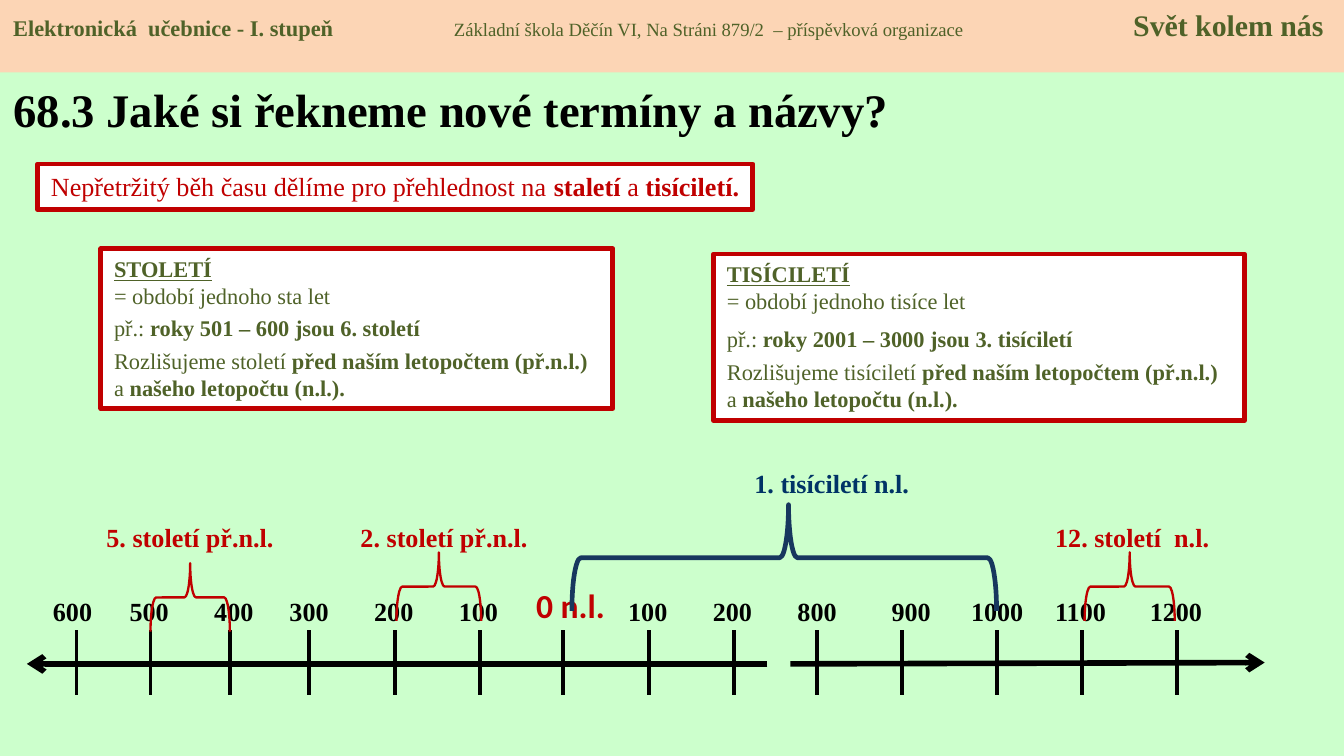
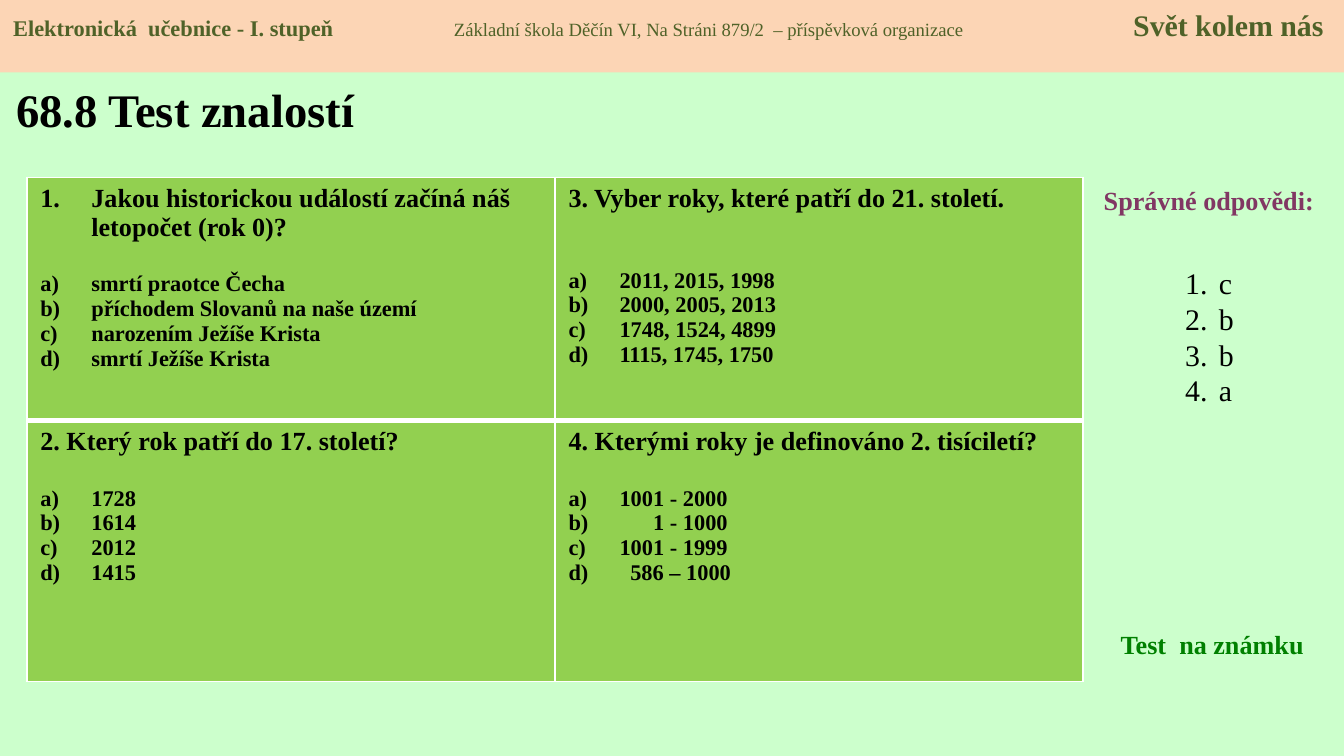
import pptx
import pptx.dml.color
import pptx.enum.shapes
import pptx.enum.text
import pptx.oxml
import pptx.oxml.ns
import pptx.util
from lxml import etree

Inches, Pt = pptx.util.Inches, pptx.util.Pt
SHAPES = pptx.enum.shapes.MSO_SHAPE
ALIGN = pptx.enum.text.PP_ALIGN
ANCHOR = pptx.enum.text.MSO_ANCHOR

# Shared palette
FONT = "Times New Roman"
BLACK, WHITE, RED = "000000", "FFFFFF", "C00000"
MINT, PEACH, OLIVE = "CCFFCC", "FCD5B5", "4F6228"
LIME, NAVY = "92D050", "17375E"


def rgb(hex_color):
    return pptx.dml.color.RGBColor.from_string(hex_color)


def sub(parent, tag, **attributes):
    """Append a DrawingML child element."""
    element = etree.SubElement(parent, pptx.oxml.ns.qn(tag))
    for key, value in attributes.items():
        element.set(key, str(value))
    return element


def add_run(paragraph, text, size=14, color=BLACK, bold=False,
            underline=False, font=FONT):
    run = paragraph.add_run()
    run.text = text
    run.font.name, run.font.size = font, Pt(size)
    run.font.bold, run.font.underline = bold, underline
    run.font.color.rgb = rgb(color)


def add_marked(paragraph, text, **style):
    """Write text in which **double stars** enclose bold words."""
    for i, part in enumerate(text.split("**")):
        if part:
            add_run(paragraph, part, **{**style, "bold": i % 2 == 1})


def number(paragraph, scheme, margin, hang):
    properties = paragraph._p.get_or_add_pPr()
    properties.set("marL", str(Inches(margin)))
    properties.set("indent", str(-Inches(hang)))
    sub(properties, "a:buFont", typeface="+mj-lt")
    sub(properties, "a:buAutoNum", type=scheme)


def next_paragraph(frame):
    first = frame.paragraphs[0]
    return frame.add_paragraph() if first.runs else first


class Lesson:
    def __init__(self):
        self.deck = pptx.Presentation()
        self.deck.slide_width = Inches(10)
        self.deck.slide_height = Inches(10 * 9 / 16)
        fill = self.deck.slide_master.background.fill
        fill.solid()
        fill.fore_color.rgb = rgb(MINT)

    def start(self, heading, left, width):
        self.slide = self.deck.slides.add_slide(self.deck.slide_layouts[5])
        title = self.slide.shapes.title
        title.left, title.top = Inches(left), Inches(0.55)
        title.width, title.height = Inches(width), Inches(0.52)
        frame = self.frame(title, wrap=False, anchor=ANCHOR.MIDDLE)
        frame.paragraphs[0].alignment = ALIGN.LEFT
        add_run(frame.paragraphs[0], heading, size=25, bold=True)
        self.band()

    def frame(self, shape, wrap=True, anchor=ANCHOR.TOP, inset=(0.1, 0.05),
              grow=True):
        frame = shape.text_frame
        frame.word_wrap, frame.vertical_anchor = wrap, anchor
        if grow:
            frame.auto_size = pptx.enum.text.MSO_AUTO_SIZE.SHAPE_TO_FIT_TEXT
        side, edge = inset
        frame.margin_left = frame.margin_right = Inches(side)
        frame.margin_top = frame.margin_bottom = Inches(edge)
        return frame

    def shape(self, kind, box, fill=None, line=None, weight=2.5):
        shape = self.slide.shapes.add_shape(kind, *map(Inches, box))
        shape.shadow.inherit = False
        if fill:
            shape.fill.solid()
            shape.fill.fore_color.rgb = rgb(fill)
        else:
            shape.fill.background()
        if line:
            shape.line.color.rgb = rgb(line)
            shape.line.width = Pt(weight)
        else:
            shape.line.fill.background()
        return shape

    def band(self):
        """Header: three texts on one line, set apart by tab stops."""
        band = self.shape(SHAPES.RECTANGLE, (0, 0, 10, 0.54), PEACH)
        paragraph = self.frame(band, grow=False).paragraphs[0]
        paragraph.alignment = ALIGN.LEFT
        stops = sub(paragraph._p.get_or_add_pPr(), "a:tabLst")
        sub(stops, "a:tab", pos=Inches(3.28), algn="l")
        sub(stops, "a:tab", pos=Inches(9.75), algn="r")
        add_run(paragraph, "Elektronická  učebnice - I. stupeň\t",
                size=12, color=OLIVE, bold=True)
        add_run(paragraph, "Základní škola Děčín VI, Na Stráni 879/2  – "
                "příspěvková organizace\t", size=10, color=OLIVE)
        add_run(paragraph, "Svět kolem nás", size=16, color=OLIVE, bold=True)

    def label(self, text, box, align=ALIGN.CENTER, wrap=False,
              inset=(0.03, 0.04), **style):
        label = self.slide.shapes.add_textbox(*map(Inches, box))
        paragraph = self.frame(label, wrap, inset=inset).paragraphs[0]
        paragraph.alignment = align
        add_run(paragraph, text, **{"bold": True, **style})

    def panel(self, box, lines, heading=None, align=ALIGN.LEFT, **style):
        """Red-framed box; lines are (marked text, space after)."""
        frame = self.frame(self.shape(SHAPES.RECTANGLE, box, WHITE, RED), wrap=False)
        if heading:
            add_run(frame.paragraphs[0], heading, bold=True, underline=True, **style)
        for text, after in lines:
            paragraph = next_paragraph(frame)
            add_marked(paragraph, text, **style)
            paragraph.space_after = Pt(after)
        for paragraph in frame.paragraphs:
            paragraph.alignment = align

    def line(self, start, end, weight, arrow=False):
        line = self.slide.shapes.add_connector(
            pptx.enum.shapes.MSO_CONNECTOR.STRAIGHT, *map(Inches, start + end))
        line.line.color.rgb, line.line.width = rgb(BLACK), Pt(weight)
        if arrow:
            sub(line.line._get_or_add_ln(), "a:tailEnd", type="arrow")
        sub(line._element.spPr, "a:effectLst")

    def brace(self, box, color, weight, point=0.5):
        brace = self.shape(SHAPES.LEFT_BRACE, box, line=color, weight=weight)
        brace.rotation = 90
        brace.adjustments[1] = point

    def answers(self, box, letters):
        answers = self.slide.shapes.add_textbox(*map(Inches, box))
        frame = self.frame(answers)
        for letter in letters:
            paragraph = next_paragraph(frame)
            add_run(paragraph, letter, size=16)
            number(paragraph, "arabicPeriod", 0.25, 0.25)

    def quiz(self, box, heights, questions):
        """Grid of questions; options are texts or (text, extra indent)."""
        columns = len(questions[0])
        table = self.slide.shapes.add_table(
            len(questions), columns, *map(Inches, box)).table
        table.first_row = table.horz_banding = False
        for column in table.columns:
            column.width = Inches(box[2] / columns)
        for r, row in enumerate(questions):
            table.rows[r].height = Inches(heights[r])
            for c, (question, numbered, gap, options) in enumerate(row):
                cell = table.cell(r, c)
                self.borders(cell, top=3 if r else 1, bottom=1 if r else 3)
                cell.fill.solid()
                cell.fill.fore_color.rgb = rgb(LIME)
                paragraph = cell.text_frame.paragraphs[0]
                add_run(paragraph, question, bold=True)
                if numbered:
                    number(paragraph, "arabicPeriod", 0.38, 0.38)
                for i, option in enumerate(options):
                    text, extra = option if isinstance(option, tuple) else (option, 0)
                    paragraph = cell.text_frame.add_paragraph()
                    add_run(paragraph, text, size=12, bold=True)
                    paragraph.space_before = Pt(0 if i else gap)
                    number(paragraph, "alphaLcParenR", 0.38 + extra, 0.38 + extra)

    def borders(self, cell, top, bottom):
        properties = cell._tc.get_or_add_tcPr()
        for side, weight in (("L", 1), ("R", 1), ("T", top), ("B", bottom)):
            edge = sub(properties, "a:ln" + side, w=Pt(weight))
            sub(sub(edge, "a:solidFill"), "a:srgbClr", val=WHITE)


def build_terms(lesson):
    lesson.start("68.3 Jaké si řekneme nové termíny a názvy?", 0, 6.79)

    # Timeline: year, tick position, label centre
    origin = lesson.shape(SHAPES.RECTANGLE, (3.89, 4.3, 0.72, 0.4), MINT)
    zero = lesson.frame(origin, wrap=False).paragraphs[0]
    zero.alignment = ALIGN.LEFT
    add_run(zero, "0 n.l.", size=18, color=RED, bold=True, font="Calibri")
    years = [("600", 0.57, 0.54), ("500", 1.12, 1.11), ("400", 1.71, 1.74),
             ("300", 2.3, 2.3), ("200", 2.94, 2.93), ("100", 3.57, 3.56),
             ("", 4.19, 4.19), ("100", 4.83, 4.82), ("200", 5.46, 5.45),
             ("800", 6.08, 6.08), ("900", 6.71, 6.78), ("1000", 7.42, 7.42),
             ("1100", 8.05, 8.04), ("1200", 8.76, 8.75)]
    for year, tick, center in years:
        lesson.line((tick, 4.69), (tick, 5.17), 2)
        if year:
            width = 0.37 if len(year) == 3 else 0.47
            lesson.label(year, (center - width / 2, 4.39, width, 0.32))
    lesson.line((5.71, 4.94), (0.2, 4.94), 3, arrow=True)
    lesson.line((5.88, 4.94), (9.41, 4.93), 3, arrow=True)

    # Centuries and the millennium marked above the line
    centuries = [("5. století př.n.l.", (0.75, 1.33), (1.16, 4.15, 0.51, 0.59)),
                 ("2. století př.n.l.", (2.64, 1.33), (3.01, 4.05, 0.51, 0.63)),
                 ("12. století  n.l.", (7.81, 1.23), (8.15, 4.03, 0.51, 0.67))]
    for century, (left, width), span in centuries:
        lesson.brace(span, RED, 1.25)
        lesson.label(century, (left, 3.84, width, 0.32), color=RED)
    lesson.brace((5.44, 2.57, 0.79, 3.16), NAVY, 2.5, point=0.49)
    lesson.label("1. tisíciletí n.l.", (5.57, 3.44, 1.24, 0.32), color="003366")

    # Definitions
    terms = [("STOLETÍ", "sta let", "roky 501 – 600 jsou 6. století", "století",
              3, (0.75, 1.85, 3.81, 1.19)),
             ("TISÍCILETÍ", "tisíce let", "roky 2001 – 3000 jsou 3. tisíciletí",
              "tisíciletí", 6, (5.31, 1.89, 3.95, 1.24))]
    for heading, length, example, term, after, box in terms:
        lesson.panel(box, [
            (f"= období jednoho {length}", after),
            (f"př.: **{example}**", 3),
            (f"Rozlišujeme {term} **před naším letopočtem (př.n.l.)**", 0),
            ("a **našeho letopočtu (n.l.).**", 0),
        ], heading, size=12, color=OLIVE)
    lesson.panel((0.28, 1.22, 5.32, 0.34), [
        ("Nepřetržitý běh času dělíme pro přehlednost na "
         "**staletí **a** tisíciletí.**", 0)], align=ALIGN.CENTER, color=RED)


def build_test(lesson):
    lesson.start("68.8 Test znalostí", 0.02, 2.75)

    # Questions: text, numbered, gap before options, options
    lesson.quiz((0.2, 1.32, 7.86, 3.75), (1.81, 1.94), [
        [("Jakou historickou událostí začíná náš letopočet (rok 0)?", True, 16,
          ["smrtí praotce Čecha", "příchodem Slovanů na naše území",
           "narozením Ježíše Krista", "smrtí Ježíše Krista"]),
         ("3. Vyber roky, které patří do 21. století.", False, 29.5,
          ["2011, 2015, 1998", "2000, 2005, 2013",
           "1748, 1524, 4899", "1115, 1745, 1750"])],
        [("2. Který rok patří do 17. století?", False, 16,
          ["1728", "1614", "2012", "1415"]),
         ("4. Kterými roky je definováno 2. tisíciletí?", False, 16,
          ["1001 - 2000", ("1 - 1000", 0.25), "1001 - 1999",
           ("586 – 1000", 0.08)])],
    ])

    # Answers
    lesson.label("Správné odpovědi:", (8.05, 1.32, 1.89, 0.34), wrap=True,
                 inset=(0.1, 0.05), color="813763")
    lesson.answers((8.72, 1.92, 0.55, 1.2), "cbba")
    lesson.label("Test  na známku", (8.24, 4.63, 1.57, 0.34), ALIGN.LEFT,
                 wrap=True, inset=(0.1, 0.05), color="008000")


def main():
    lesson = Lesson()
    build_terms(lesson)
    build_test(lesson)
    lesson.deck.save("out.pptx")


if __name__ == "__main__":
    main()
